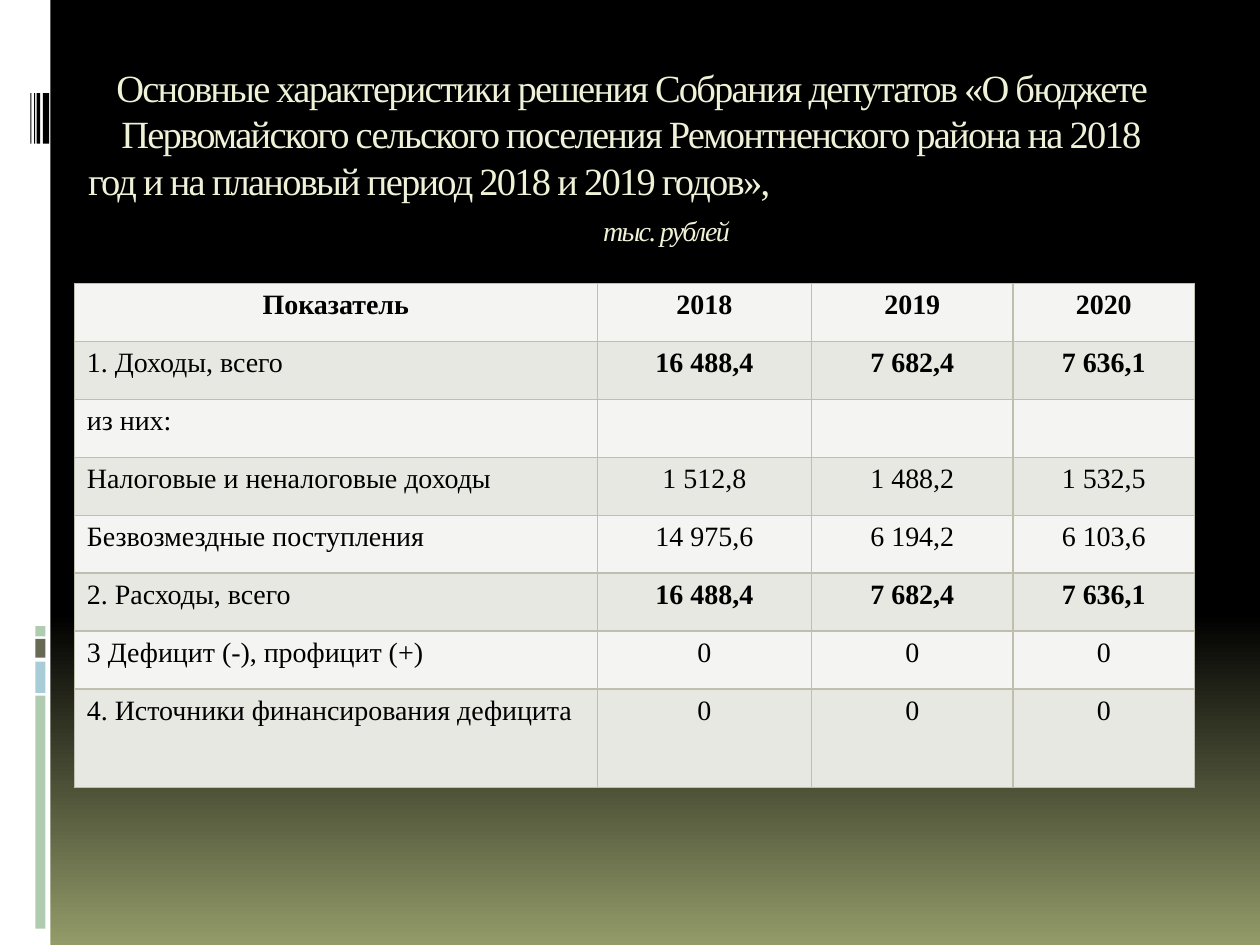
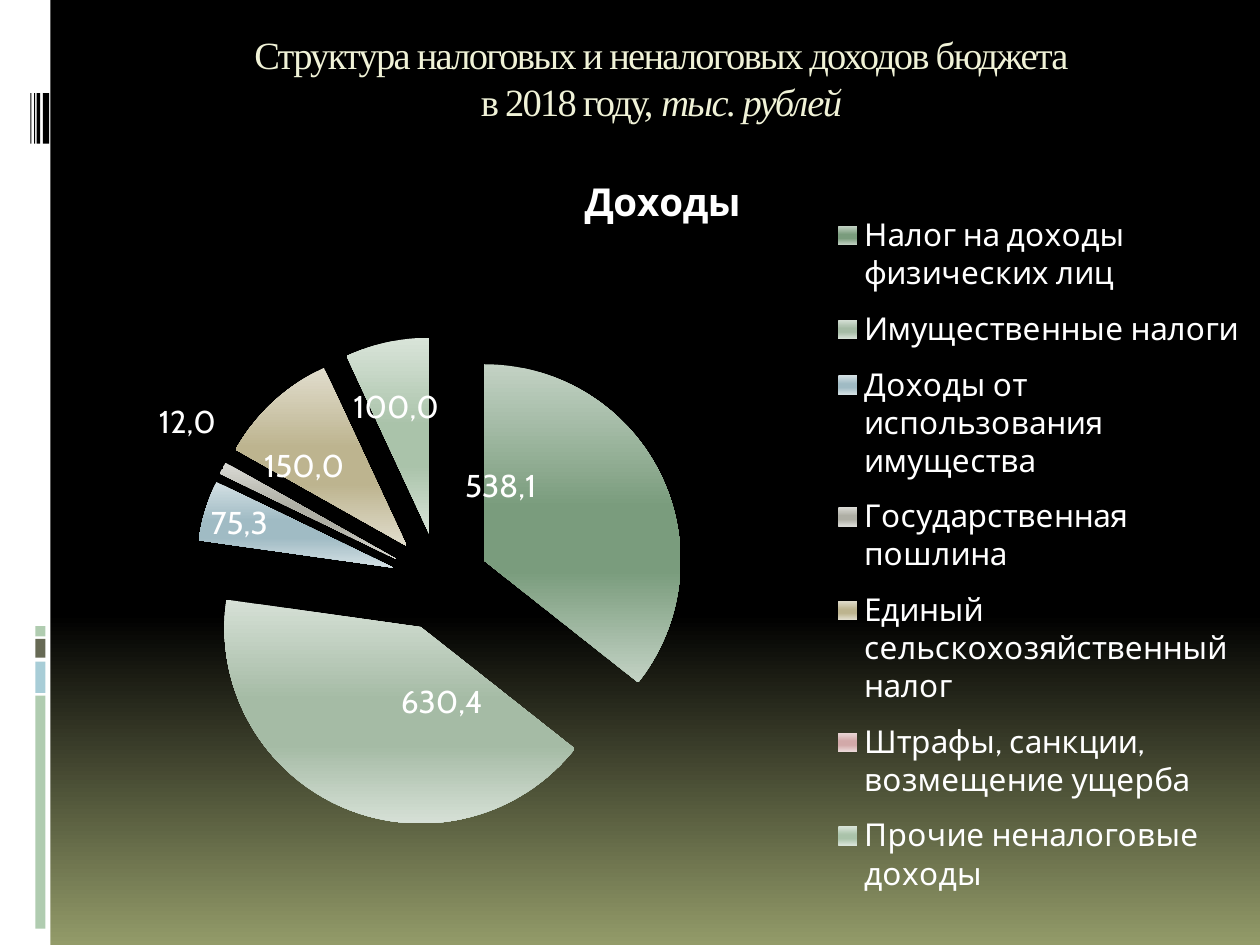
from dataclasses import dataclass

from lxml.etree import SubElement
from pptx import Presentation
from pptx.chart.data import CategoryChartData
from pptx.dml.color import RGBColor
from pptx.enum.chart import XL_CHART_TYPE, XL_LABEL_POSITION, XL_LEGEND_POSITION
from pptx.enum.shapes import MSO_SHAPE
from pptx.enum.text import MSO_ANCHOR, PP_ALIGN
from pptx.oxml.ns import qn
from pptx.util import Emu, Pt

SCALE = 9144


@dataclass(frozen=True)
class Theme:
    serif: str = "Times New Roman"
    sans: str = "Cabin"
    black: str = "000000"
    white: str = "FFFFFF"
    glow: str = "939B69"
    title: str = "F0F2D7"
    green: str = "B0CCB0"
    blue: str = "A8CDD7"
    olive: str = "676A55"
    border: str = "C0BEAF"
    bands: tuple = ("F4F4F2", "E8E8E3")
    slices: tuple = ("7A9C7D", "A5BBA5", "A0BBC4", "AFAFA5", "BDB48F", "D2A9A9", "AAC3AA")
    title_size: int = 22
    body_size: int = 16
    chart_size: int = 18
    tracking: int = -100


def px(n):
    return Emu(n * SCALE)


def rgb(color):
    return RGBColor.from_string(color)


def tint(color, share=0.55):
    return "".join(f"{round(c + (255 - c) * share):02X}" for c in bytes.fromhex(color))


def set_gradient(grad, stops):
    for child in list(grad):
        grad.remove(child)
    gs_list = SubElement(grad, qn("a:gsLst"))
    for pos, color in stops:
        gs = SubElement(gs_list, qn("a:gs"), pos=str(pos * 1000))
        SubElement(gs, qn("a:srgbClr"), val=color)
    SubElement(grad, qn("a:lin"), ang="5400000", scaled="0")


def set_layout(parent, index, **values):
    for old in parent.findall(qn("c:layout")):
        parent.remove(old)
    layout = SubElement(parent, qn("c:layout"))
    manual = SubElement(layout, qn("c:manualLayout"))
    if parent.tag == qn("c:plotArea"):
        SubElement(manual, qn("c:layoutTarget"), val="inner")
    if parent.tag != qn("c:dLbl"):
        for mode in ("xMode", "yMode"):
            SubElement(manual, qn(f"c:{mode}"), val="edge")
    for key, value in values.items():
        SubElement(manual, qn(f"c:{key}"), val=str(value))
    parent.insert(index, layout)


class Deck:
    def __init__(self, theme):
        self.theme = theme
        self.prs = Presentation()
        self.prs.slide_width, self.prs.slide_height = px(1000), px(750)
        self.s = None

    def font(self, font, size, color, bold=False, italic=False, name=None):
        font.name = name or self.theme.serif
        font.size = Pt(size)
        font.color.rgb = rgb(color)
        font.bold, font.italic = bold, italic

    def rect(self, x, y, w, h, color):
        sp = self.s.shapes.add_shape(MSO_SHAPE.RECTANGLE, px(x), px(y), px(w), px(h))
        sp.shadow.inherit = False
        sp.fill.solid()
        sp.fill.fore_color.rgb = rgb(color)
        sp.line.fill.background()

    def slide(self):
        t = self.theme
        self.s = self.prs.slides.add_slide(self.prs.slide_layouts[6])
        self.s.background.fill.gradient()
        grad = next(self.s.element.iter(qn("a:gradFill")))
        set_gradient(grad, [(0, t.black), (65, t.black), (100, t.glow)])
        self.rect(0, 0, 40, 750, t.white)
        for y, h, color in ((552, 185, t.green), (525, 25, t.blue),
                            (507, 15, t.olive), (497, 8, t.green)):
            self.rect(28, y, 8, h, color)
        for x, w in ((34, 5), (29, 3), (27, 1), (24, 1)):
            self.rect(x, 74, w, 40, t.black)

    def title(self, x, y, w, h):
        tf = self.s.shapes.add_textbox(px(x), px(y), px(w), px(h)).text_frame
        tf.word_wrap = True
        tf.vertical_anchor = MSO_ANCHOR.TOP
        return tf

    def title_line(self, tf, text, align=PP_ALIGN.CENTER, size=None, italic=False,
                   tail="", indent=0, before=0):
        p = tf.paragraphs[0] if not tf.paragraphs[0].runs else tf.add_paragraph()
        p.alignment = align
        p.space_before = Pt(before)
        self.font(p.font, size or self.theme.title_size, self.theme.title, italic=italic)
        p._p.pPr.set("marL", str(px(indent)))
        p.add_run().text = text
        if tail:
            r = p.add_run()
            r.text = tail
            r.font.italic = True
        for r in p.runs:
            r._r.get_or_add_rPr().set("spc", str(self.theme.tracking))

    def cell(self, cell, text, fill, align, bold):
        tc_pr = cell._tc.get_or_add_tcPr()
        for side in ("lnL", "lnR", "lnT", "lnB"):
            ln = SubElement(tc_pr, qn(f"a:{side}"), w=str(Pt(1)))
            solid = SubElement(ln, qn("a:solidFill"))
            SubElement(solid, qn("a:srgbClr"), val=self.theme.border)
        cell.fill.solid()
        cell.fill.fore_color.rgb = rgb(fill)
        p = cell.text_frame.paragraphs[0]
        p.alignment = align
        self.font(p.font, self.theme.body_size, self.theme.black, bold)
        if text:
            p.add_run().text = text

    def table(self, x, y, widths, heights, rows, bold_rows):
        frame = self.s.shapes.add_table(len(rows), len(widths), px(x), px(y),
                                        px(sum(widths)), px(sum(heights)))
        table = frame.table
        table.first_row = table.horz_banding = False
        for col, width in zip(table.columns, widths):
            col.width = px(width)
        for i, (row, height) in enumerate(zip(rows, heights)):
            table.rows[i].height = px(height)
            for j, text in enumerate(row):
                label = j == 0 and i > 0
                self.cell(table.cell(i, j), text, self.theme.bands[i % 2],
                          PP_ALIGN.LEFT if label else PP_ALIGN.CENTER,
                          i in bold_rows and not label)

    def pie(self, x, y, w, h, name, items):
        t = self.theme
        total = sum(value for _, value, _ in items)
        data = CategoryChartData(number_format="0")
        data.categories = [label for label, _, _ in items]
        data.add_series(name, [round(value / total * 100) for _, value, _ in items])
        chart = self.s.shapes.add_chart(XL_CHART_TYPE.PIE, px(x), px(y), px(w), px(h), data).chart
        self.font(chart.font, t.chart_size, t.white, name=t.sans)

        chart.has_title = True
        tf = chart.chart_title.text_frame
        tf.text = name
        self.font(tf.paragraphs[0].font, t.title_size, t.white, True, name=t.sans)
        chart.has_legend = True
        chart.legend.position = XL_LEGEND_POSITION.RIGHT
        chart.legend.include_in_layout = False
        self.font(chart.legend.font, t.chart_size, t.white, name=t.sans)

        plot = chart.plots[0]
        plot.vary_by_categories = True
        root = chart.element
        ser = next(root.iter(qn("c:ser")))
        explosion = SubElement(ser, qn("c:explosion"), val="25")
        ser.find(qn("c:cat")).addprevious(explosion)
        for i, (_, value, _) in enumerate(items):
            point = plot.series[0].points[i]
            point.format.fill.gradient()
            point.format.line.fill.background()
            label = point.data_label
            r = label.text_frame.paragraphs[0].add_run()
            r.text = f"{value:.1f}".replace(".", ",")
            self.font(r.font, t.chart_size, t.white, name=t.sans)
            thin = value < total * 0.02
            label.position = XL_LABEL_POSITION.OUTSIDE_END if thin else XL_LABEL_POSITION.CENTER
        for grad, color in zip(list(root.iter(qn("a:gradFill"))), t.slices):
            edge = tint(color)
            set_gradient(grad, [(0, edge), (45, color), (65, color), (100, edge)])
        for label, (_, _, (dx, dy)) in zip(list(root.iter(qn("c:dLbl"))), items):
            set_layout(label, 1, x=dx, y=dy)
        set_layout(next(root.iter(qn("c:title"))), 1, x=0.43, y=0.03)
        set_layout(next(root.iter(qn("c:plotArea"))), 0, x=0.11, y=0.24, w=0.41, h=0.65)
        set_layout(next(root.iter(qn("c:legend"))), 1, x=0.64, y=0.07, w=0.35, h=0.92)


def budget_slide(deck):
    deck.slide()
    tf = deck.title(60, 46, 882, 172)
    deck.title_line(tf, "Основные характеристики решения Собрания депутатов «О бюджете "
                        "Первомайского сельского поселения Ремонтненского района на 2018")
    deck.title_line(tf, "год и на плановый период 2018 и 2019 годов»,", PP_ALIGN.LEFT)
    deck.title_line(tf, "тыс. рублей", size=deck.theme.body_size, italic=True,
                    indent=56, before=6)
    rows = [
        ("Показатель", "2018", "2019", "2020"),
        ("1. Доходы, всего", "16 488,4", "7 682,4", "7 636,1"),
        ("из них:", "", "", ""),
        ("Налоговые и неналоговые доходы", "1 512,8", "1 488,2", "1 532,5"),
        ("Безвозмездные поступления", "14 975,6", "6 194,2", "6 103,6"),
        ("2. Расходы, всего", "16 488,4", "7 682,4", "7 636,1"),
        ("3 Дефицит (-), профицит (+)", "0", "0", "0"),
        ("4. Источники финансирования дефицита", "0", "0", "0"),
    ]
    deck.table(59, 225, (415, 170, 160, 144), [46] * 7 + [78], rows, bold_rows=(0, 1, 5))


def income_slide(deck):
    deck.slide()
    tf = deck.title(100, 20, 850, 87)
    deck.title_line(tf, "Структура налоговых и неналоговых доходов бюджета")
    deck.title_line(tf, "в 2018 году, ", tail="тыс. рублей")
    deck.pie(50, 115, 950, 614, "Доходы", [
        ("Налог на доходы физических лиц", 538.1, (-0.06, -0.04)),
        ("Имущественные налоги", 630.4, (0.05, -0.02)),
        ("Доходы от использования имущества", 75.3, (-0.05, -0.02)),
        ("Государственная пошлина", 12.0, (0, -0.03)),
        ("Единый сельскохозяйственный налог", 150.0, (-0.03, -0.01)),
        ("Штрафы, санкции, возмещение ущерба", 7.0, (0, -0.03)),
        ("Прочие неналоговые доходы", 100.0, (-0.01, -0.04)),
    ])


def main():
    deck = Deck(Theme())
    budget_slide(deck)
    income_slide(deck)
    deck.prs.save("out.pptx")


if __name__ == "__main__":
    main()
